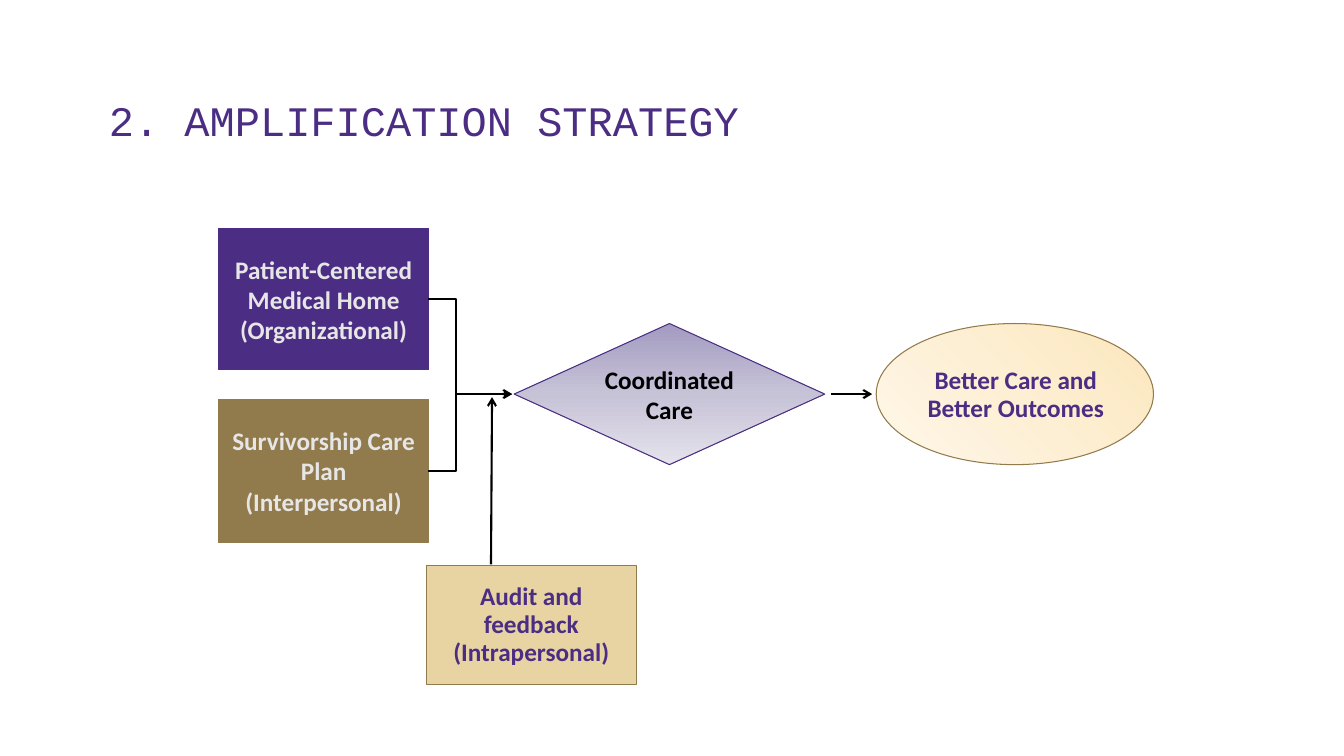
from dataclasses import dataclass
from typing import Optional

from lxml import etree
from pptx import Presentation
from pptx.dml.color import RGBColor
from pptx.enum.shapes import MSO_CONNECTOR, MSO_SHAPE
from pptx.enum.text import MSO_ANCHOR, MSO_AUTO_SIZE, PP_ALIGN
from pptx.oxml.ns import qn
from pptx.util import Inches, Pt

RECTANGLE, DIAMOND, ELLIPSE = MSO_SHAPE.RECTANGLE, MSO_SHAPE.DIAMOND, MSO_SHAPE.OVAL
ELBOW, STRAIGHT = MSO_CONNECTOR.ELBOW, MSO_CONNECTOR.STRAIGHT
LEFT, CENTER = PP_ALIGN.LEFT, PP_ALIGN.CENTER
TOP, MIDDLE, BOTTOM = MSO_ANCHOR.TOP, MSO_ANCHOR.MIDDLE, MSO_ANCHOR.BOTTOM

PURPLE = RGBColor(0x4B, 0x2E, 0x83)
BRONZE = RGBColor(0x91, 0x7B, 0x4C)
SAND = RGBColor(0xE8, 0xD3, 0xA2)
LIGHT_GRAY = RGBColor(0xE7, 0xE6, 0xE6)
BLACK = RGBColor(0x00, 0x00, 0x00)
LAVENDER_STOPS = tuple(map(RGBColor.from_string, ("A39BC1", "C7C3D7", "E4E2EB")))
CREAM_STOPS = tuple(map(RGBColor.from_string, ("FCE7BC", "FDEFD4", "FEF7EA")))

TITLE_ONLY_LAYOUT = 5
FLOW_Y = 3.91
TIGHT_LINES = Pt(20)


@dataclass(frozen=True)
class Node:
    preset: MSO_SHAPE
    box: tuple[float, float, float, float]
    line: RGBColor
    fill: Optional[RGBColor] = None
    gradient: tuple[RGBColor, ...] = ()
    radial: bool = False
    text: str = ""
    color: RGBColor = PURPLE
    line_spacing: Optional[Pt] = None


@dataclass(frozen=True)
class Arrow:
    kind: MSO_CONNECTOR
    start: tuple[float, float]
    end: tuple[float, float]
    head: str = "arrow"
    bend: float = 0.5


NODES = (
    Node(RECTANGLE, (2.17, 2.27, 2.08, 1.4), PURPLE, PURPLE, color=LIGHT_GRAY,
         text="Patient-Centered Medical Home\n(Organizational)"),
    Node(RECTANGLE, (2.17, 3.96, 2.08, 1.42), BRONZE, BRONZE, color=LIGHT_GRAY,
         text="Survivorship Care Plan\n(Interpersonal)"),
    Node(RECTANGLE, (4.23, 5.61, 2.08, 1.18), BRONZE, SAND,
         text="Audit and feedback\n(Intrapersonal)", line_spacing=TIGHT_LINES),
    Node(ELLIPSE, (8.69, 3.21, 2.75, 1.4), BRONZE, gradient=CREAM_STOPS, radial=True),
    Node(DIAMOND, (5.1, 3.21, 3.08, 1.4), PURPLE, gradient=LAVENDER_STOPS,
         text="Coordinated Care", color=BLACK),
)

ARROWS = (
    Arrow(ELBOW, (4.25, 2.97), (5.08, FLOW_Y), head="triangle", bend=0.33),
    Arrow(ELBOW, (4.25, 4.67), (5.08, FLOW_Y), bend=0.33),
    Arrow(STRAIGHT, (4.87, 5.6), (4.88, 3.94)),
    Arrow(ELBOW, (8.24, FLOW_Y), (8.65, FLOW_Y)),
)


def write_text(shape, text: str, *, size: float = 18, font: str = "Calibri",
               color: RGBColor = PURPLE, bold: bool = True, align=CENTER,
               anchor=MIDDLE, line_spacing=None) -> None:
    frame = shape.text_frame
    frame.word_wrap = True
    frame.auto_size = MSO_AUTO_SIZE.NONE
    frame.vertical_anchor = anchor
    paragraph = frame.paragraphs[0]
    paragraph.text = text
    paragraph.alignment = align
    paragraph.line_spacing = line_spacing
    for run in paragraph.runs:
        run.font.size = Pt(size)
        run.font.name = font
        run.font.bold = bold
        run.font.color.rgb = color


def fill_gradient(shape, colors: tuple[RGBColor, ...], radial: bool) -> None:
    """Spread the colors evenly, downward or outward from the top right corner."""
    shape.fill.gradient()
    gradient = shape._element.spPr.find(qn("a:gradFill"))
    for child in list(gradient):
        gradient.remove(child)
    stops = etree.SubElement(gradient, qn("a:gsLst"))
    for index, color in enumerate(colors):
        position = 100000 * index // (len(colors) - 1)
        stop = etree.SubElement(stops, qn("a:gs"), pos=str(position))
        etree.SubElement(stop, qn("a:srgbClr"), val=str(color))
    if radial:
        circle = etree.SubElement(gradient, qn("a:path"), path="circle")
        etree.SubElement(circle, qn("a:fillToRect"), l="100000", b="100000")
    else:
        etree.SubElement(gradient, qn("a:lin"), ang="5400000", scaled="0")


def add_node(slide, node: Node) -> None:
    shape = slide.shapes.add_shape(node.preset, *map(Inches, node.box))
    shape.shadow.inherit = False
    if node.gradient:
        fill_gradient(shape, node.gradient, node.radial)
    else:
        shape.fill.solid()
        shape.fill.fore_color.rgb = node.fill
    shape.line.color.rgb = node.line
    shape.line.width = Pt(0.75)
    if node.text:
        write_text(shape, node.text, color=node.color, line_spacing=node.line_spacing)


def add_arrow(slide, arrow: Arrow) -> None:
    connector = slide.shapes.add_connector(
        arrow.kind, *map(Inches, arrow.start + arrow.end))
    connector.line.color.rgb = BLACK
    connector.line.width = Pt(1.5)
    properties = connector._element.spPr
    etree.SubElement(properties.find(qn("a:ln")), qn("a:tailEnd"), type=arrow.head)
    etree.SubElement(properties, qn("a:effectLst"))
    if arrow.kind == ELBOW:
        adjustments = properties.find(qn("a:prstGeom")).get_or_add_avLst()
        etree.SubElement(adjustments, qn("a:gd"), name="adj1",
                         fmla=f"val {round(arrow.bend * 100000)}")


def main() -> None:
    presentation = Presentation()
    presentation.slide_width, presentation.slide_height = Inches(13.33), Inches(7.5)
    slide = presentation.slides.add_slide(presentation.slide_layouts[TITLE_ONLY_LAYOUT])

    title = slide.shapes.title
    title.left, title.top = Inches(0.98), Inches(0.41)
    title.width, title.height = Inches(11.93), Inches(1.08)
    write_text(title, "2. AMPLIFICATION STRATEGY", size=30, font="Courier New",
               bold=False, align=LEFT, anchor=BOTTOM, line_spacing=0.9)

    for node in NODES:
        add_node(slide, node)
    for arrow in ARROWS:
        add_arrow(slide, arrow)

    outcome = slide.shapes.add_textbox(*map(Inches, (8.99, 3.59, 2.17, 0.62)))
    write_text(outcome, "Better Care and Better Outcomes", anchor=TOP,
               line_spacing=TIGHT_LINES)

    presentation.save("out.pptx")


if __name__ == "__main__":
    main()
